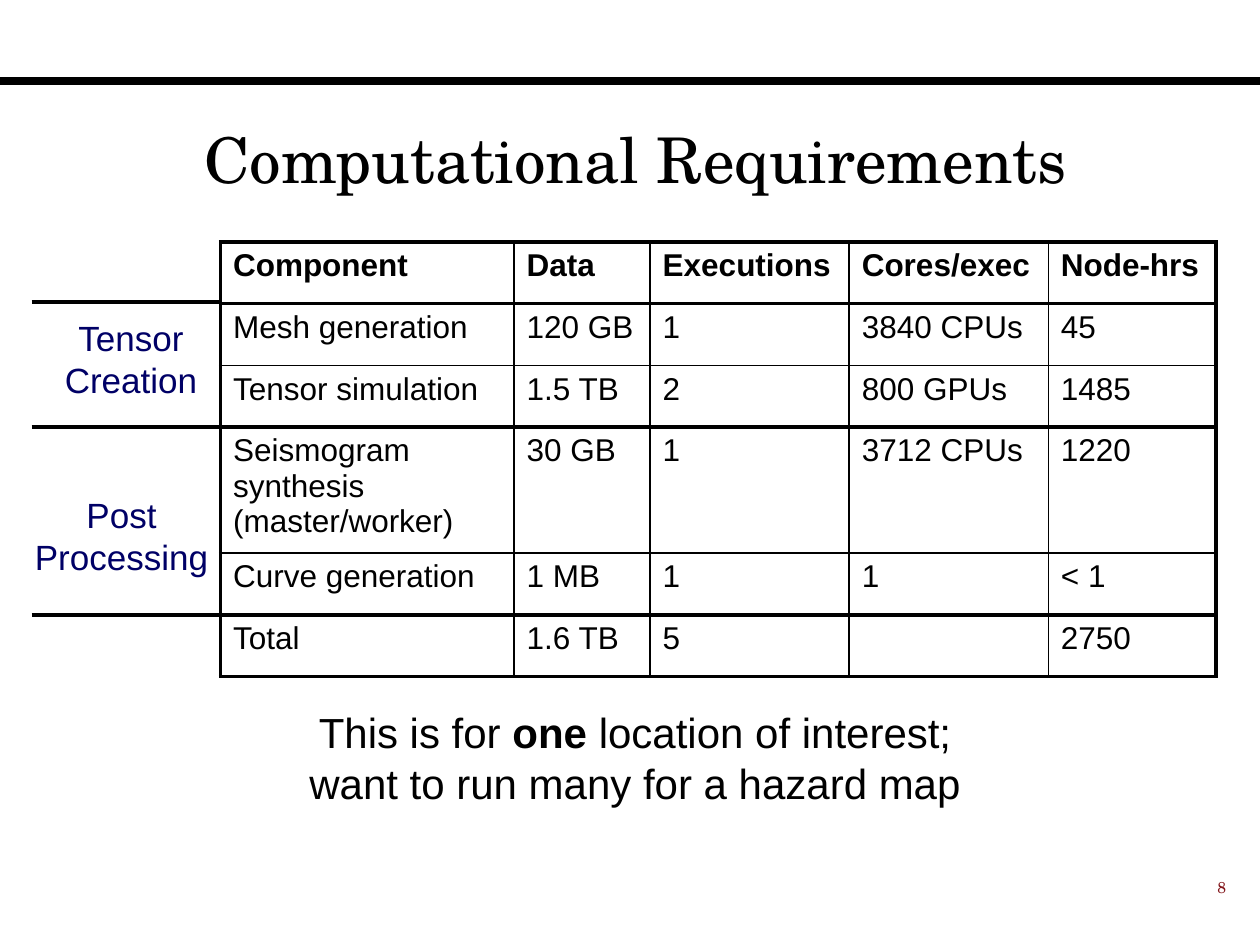
from lxml import etree
from pptx import Presentation
from pptx.dml.color import RGBColor
from pptx.enum import shapes, text
from pptx.oxml.ns import qn
from pptx.util import Inches, Pt

BLACK = RGBColor(0x00, 0x00, 0x00)
NAVY = RGBColor(0x00, 0x00, 0x66)
RED = RGBColor(0x82, 0x15, 0x1A)
SANS = "Arial"
SERIF = "TeX Gyre Schola"
CENTER = text.PP_ALIGN.CENTER

COLUMN_WIDTHS = [2.33, 1.08, 1.58, 1.58, 1.33]
ROW_HEIGHTS = [0.49, 0.49, 0.49, 0.51, 0.49, 0.49]
ROWS = [
    ["Component", "Data", "Executions", "Cores/exec", "Node-hrs"],
    ["Mesh generation", "120 GB", "1", "3840 CPUs", "45"],
    ["Tensor simulation", "1.5 TB", "2", "800 GPUs", "1485"],
    ["Seismogram synthesis (master/worker)", "30 GB", "1", "3712 CPUs", "1220"],
    ["Curve generation", "1 MB", "1", "1", "< 1"],
    ["Total", "1.6 TB", "5", "", "2750"],
]
HEAVY_ROW_EDGES = {0, 1, 3, 5, 6}
HEAVY_COLUMN_EDGES = {0, 5}


def write(para, words, size, font=SANS, color=BLACK, align=CENTER, bold=False):
    """Add words to a paragraph as one formatted run."""
    para.alignment = align
    span = para.add_run()
    span.text = words
    span.font.size = Pt(size)
    span.font.name = font
    span.font.color.rgb = color
    span.font.bold = bold


def add_text(page, left, top, width, height):
    """Add an empty wrapping text box and return its text frame."""
    box = page.shapes.add_textbox(*map(Inches, (left, top, width, height)))
    box.text_frame.word_wrap = True
    return box.text_frame


def add_rule(page, left, right, y, weight):
    """Draw a horizontal black line."""
    rule = page.shapes.add_connector(
        shapes.MSO_CONNECTOR.STRAIGHT,
        Inches(left), Inches(y), Inches(right), Inches(y))
    rule.line.color.rgb = BLACK
    rule.line.width = Pt(weight)
    etree.SubElement(rule._element.spPr, qn("a:effectLst"))


def set_borders(cell, row, column):
    """Give a cell heavy or thin sides, depending on the grid edge."""
    sides = [
        ("a:lnL", column in HEAVY_COLUMN_EDGES),
        ("a:lnR", column + 1 in HEAVY_COLUMN_EDGES),
        ("a:lnT", row in HEAVY_ROW_EDGES),
        ("a:lnB", row + 1 in HEAVY_ROW_EDGES),
    ]
    properties = cell._tc.get_or_add_tcPr()
    for tag, heavy in sides:
        side = etree.SubElement(properties, qn(tag), w=str(Pt(2.25 if heavy else 1)))
        fill = etree.SubElement(side, qn("a:solidFill"))
        etree.SubElement(fill, qn("a:srgbClr"), val=str(BLACK))


def fill_cell(cell, words, row, column):
    set_borders(cell, row, column)
    cell.fill.background()
    para = cell.text_frame.paragraphs[0]
    if not words:
        para.font.size = Pt(18)
        return
    # The last two headings are left-aligned; everything else is justified
    left_heading = row == 0 and column >= 3
    align = text.PP_ALIGN.LEFT if left_heading else text.PP_ALIGN.JUSTIFY
    if words not in ("Node-hrs", "Seismogram synthesis (master/worker)"):
        properties = para._p.get_or_add_pPr()
        properties.set("marL", str(Inches(0.38)))
        properties.set("indent", str(-Inches(0.38)))
    write(para, words, 18, align=align, bold=row == 0)


def add_requirements_table(page):
    frame = page.shapes.add_table(
        len(ROWS), len(COLUMN_WIDTHS),
        Inches(1.75), Inches(1.92), Inches(7.92), Inches(3.46))
    table = frame.table
    table.first_row = False
    table.horz_banding = False
    for column, width in zip(table.columns, COLUMN_WIDTHS):
        column.width = Inches(width)
    for row, height in zip(table.rows, ROW_HEIGHTS):
        row.height = Inches(height)
    for row, entries in enumerate(ROWS):
        for column, words in enumerate(entries):
            fill_cell(table.cell(row, column), words, row, column)


def add_title(page, words):
    title = page.shapes.title
    title.left, title.top = Inches(0.17), Inches(0.67)
    title.width, title.height = Inches(9.75), Inches(1.17)
    title.text_frame.vertical_anchor = text.MSO_ANCHOR.MIDDLE
    write(title.text_frame.paragraphs[0], words, 36, font=SERIF)


def main():
    deck = Presentation()
    deck.slide_width, deck.slide_height = Inches(10), Inches(7.5)
    page = deck.slides.add_slide(deck.slide_layouts[5])

    # Header rule, page number and title
    add_rule(page, 0, 10, 0.64, 4.5)
    number = add_text(page, 8.75, 6.92, 1.08, 0.25)
    write(number.paragraphs[0], "8", 9, font=SERIF, color=RED,
          align=text.PP_ALIGN.RIGHT)
    add_title(page, "Computational Requirements")

    add_requirements_table(page)

    # Stage labels beside the table, with rules between them
    for words, left, top, width in [("Tensor Creation", 0.25, 2.46, 1.58),
                                    ("Post Processing", 0.13, 3.87, 1.67)]:
        label = add_text(page, left, top, width, 0.77)
        write(label.paragraphs[0], words, 20, color=NAVY)
    for y in (2.4, 3.39, 4.88):
        add_rule(page, 0.25, 1.75, y, 2.25)

    # Closing remark
    remark = add_text(page, 0.25, 5.56, 9.58, 0.91)
    first = remark.paragraphs[0]
    write(first, "This is for ", 24)
    write(first, "one", 24, bold=True)
    write(first, " location of interest;", 24)
    write(remark.add_paragraph(), "want to run many for a hazard map", 24)

    deck.save("out.pptx")


if __name__ == "__main__":
    main()
